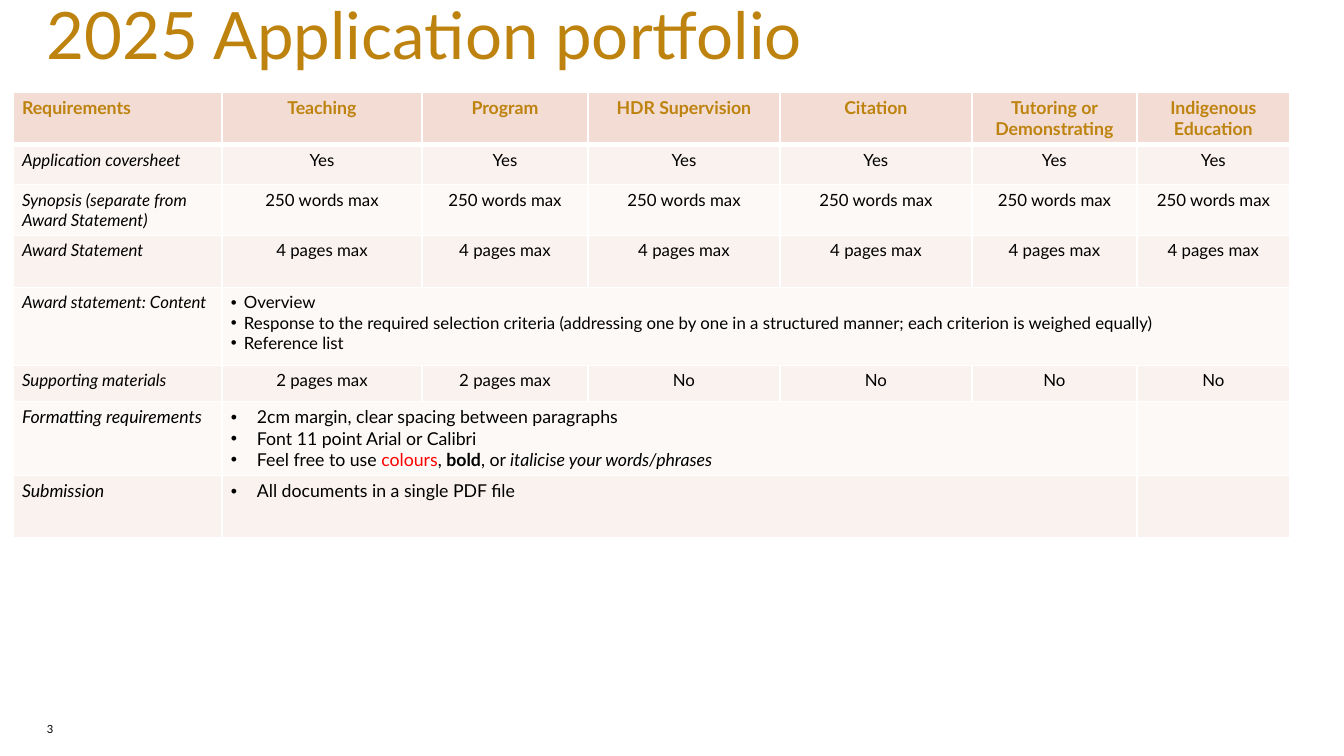
from lxml.etree import SubElement
from pptx import Presentation
from pptx.dml.color import RGBColor
from pptx.enum.text import MSO_ANCHOR, MSO_AUTO_SIZE, PP_ALIGN
from pptx.oxml.ns import qn
from pptx.util import Pt

# Content
TITLE = "2025 Application portfolio"
PAGE_NUMBER = "3"
HEADERS = ["Requirements", "Teaching", "Program", "HDR Supervision", "Citation",
           "Tutoring or Demonstrating", "Indigenous Education"]
AWARDS = len(HEADERS) - 1
CONTENT = [
    [("Overview", {})],
    [("Response to the required selection criteria (addressing one by one in a "
      "structured manner; each criterion is weighed equally)", {})],
    [("Reference list", {})],
]
FORMATTING = [
    [("2cm margin, clear spacing between paragraphs", {})],
    [("Font 11 point Arial or Calibri", {})],
    [("Feel free to use ", {}), ("colours", {"color": "FF0000"}), (", ", {}),
     ("bold", {"bold": True}), (", or ", {}),
     ("italicise your words/phrases", {"italic": True})],
]
SUBMISSION = [[("All documents in a single PDF file", {})]]

# Label, text size, then one value per award
VALUE_ROWS = {
    1: ("Application coversheet", 9, ["Yes"] * AWARDS),
    2: ("Synopsis (separate from Award Statement)", 9, ["250 words max"] * AWARDS),
    3: ("Award Statement", 9, ["4 pages max"] * AWARDS),
    5: ("Supporting materials", 9, ["2 pages max"] * 2 + ["No"] * 4),
}
# Label, text size, bullets, last merged column, bullet indent in px
LIST_ROWS = {
    4: ("Award statement: Content", 9, CONTENT, 6, 13),
    6: ("Formatting requirements", 9.5, FORMATTING, 5, 26),
    7: ("Submission", 9.5, SUBMISSION, 5, 26),
}

# Layout in px
SLIDE_SIZE = (1344, 756)
TITLE_BOX = (47, 9, 1204, 82)
NUMBER_BOX = (47, 722, 52, 16)
TABLE_CORNER = (13, 92)
COLUMN_WIDTHS = [209, 200, 166, 192, 192, 165, 153]
ROW_HEIGHTS = [52, 40, 51, 52, 78, 36, 74, 62]
CELL_MARGINS = (9, 5)

FONT = "Lato"
GOLD, BLACK, WHITE = "BE830E", "000000", "FFFFFF"
HEADER_FILL, BAND_FILLS = "F2DCD4", ("FCF9F7", "FAF2EF")


def px(value):
    return round(value * 914400 / 134.4)


def rgb(value):
    return RGBColor.from_string(value)


def add_run(paragraph, text, size, color=BLACK, bold=False, italic=False):
    run = paragraph.add_run()
    run.text = text
    font = run.font
    font.name, font.size, font.bold, font.italic = FONT, Pt(size), bold, italic
    font.color.rgb = rgb(color)


def clear_margins(frame):
    frame.margin_left = frame.margin_right = frame.margin_top = frame.margin_bottom = 0
    frame.word_wrap = True
    frame.vertical_anchor = MSO_ANCHOR.TOP


def add_bullet(paragraph, indent):
    properties = paragraph._p.get_or_add_pPr()
    properties.set("marL", str(px(indent)))
    properties.set("indent", str(-px(indent)))
    SubElement(properties, qn("a:buFont"), typeface="Arial")
    SubElement(properties, qn("a:buChar"), char="•")


def style_cell(cell, row):
    cell.margin_left = cell.margin_right = px(CELL_MARGINS[0])
    cell.margin_top = cell.margin_bottom = px(CELL_MARGINS[1])
    widths = {"lnL": 1, "lnR": 1, "lnT": 3 if row == 1 else 1, "lnB": 3 if row == 0 else 1}
    properties = cell._tc.get_or_add_tcPr()
    for side, width in widths.items():
        line = SubElement(properties, qn(f"a:{side}"), w=str(Pt(width)))
        SubElement(SubElement(line, qn("a:solidFill")), qn("a:srgbClr"), val=WHITE)
    cell.fill.solid()
    cell.fill.fore_color.rgb = rgb(BAND_FILLS[row % 2] if row else HEADER_FILL)


def write_cell(cell, text, size, centred, **style):
    paragraph = cell.text_frame.paragraphs[0]
    paragraph.alignment = PP_ALIGN.CENTER if centred else PP_ALIGN.LEFT
    add_run(paragraph, text, size, **style)


def write_bullets(frame, bullets, size, indent):
    for index, runs in enumerate(bullets):
        paragraph = frame.add_paragraph() if index else frame.paragraphs[0]
        add_bullet(paragraph, indent)
        for text, style in runs:
            add_run(paragraph, text, size, **style)


presentation = Presentation()
presentation.slide_width, presentation.slide_height = map(px, SLIDE_SIZE)
slide = presentation.slides.add_slide(presentation.slide_layouts[5])

# Title
title = slide.shapes.title
title.left, title.top, title.width, title.height = map(px, TITLE_BOX)
clear_margins(title.text_frame)
title.text_frame.auto_size = MSO_AUTO_SIZE.NONE
paragraph = title.text_frame.paragraphs[0]
paragraph.alignment, paragraph.line_spacing = PP_ALIGN.LEFT, 0.8
add_run(paragraph, TITLE, 35, GOLD)

# Page number
number = slide.shapes.add_textbox(*map(px, NUMBER_BOX))
clear_margins(number.text_frame)
add_run(number.text_frame.paragraphs[0], PAGE_NUMBER, 6)

# Table grid
table = slide.shapes.add_table(
    len(ROW_HEIGHTS), len(COLUMN_WIDTHS), *map(px, TABLE_CORNER),
    px(sum(COLUMN_WIDTHS)), px(sum(ROW_HEIGHTS))).table
for column, width in zip(table.columns, COLUMN_WIDTHS):
    column.width = px(width)
for index, height in enumerate(ROW_HEIGHTS):
    table.rows[index].height = px(height)
    for cell in table.rows[index].cells:
        style_cell(cell, index)

# Table text
for column, text in enumerate(HEADERS):
    write_cell(table.cell(0, column), text, 9.5, column > 0, color=GOLD, bold=True)
for row, (label, size, values) in VALUE_ROWS.items():
    write_cell(table.cell(row, 0), label, size, False, italic=True)
    for column, text in enumerate(values, 1):
        write_cell(table.cell(row, column), text, size, True)
for row, (label, size, bullets, last, indent) in LIST_ROWS.items():
    write_cell(table.cell(row, 0), label, size, False, italic=True)
    table.cell(row, 1).merge(table.cell(row, last))
    write_bullets(table.cell(row, 1).text_frame, bullets, size, indent)

presentation.save("out.pptx")
